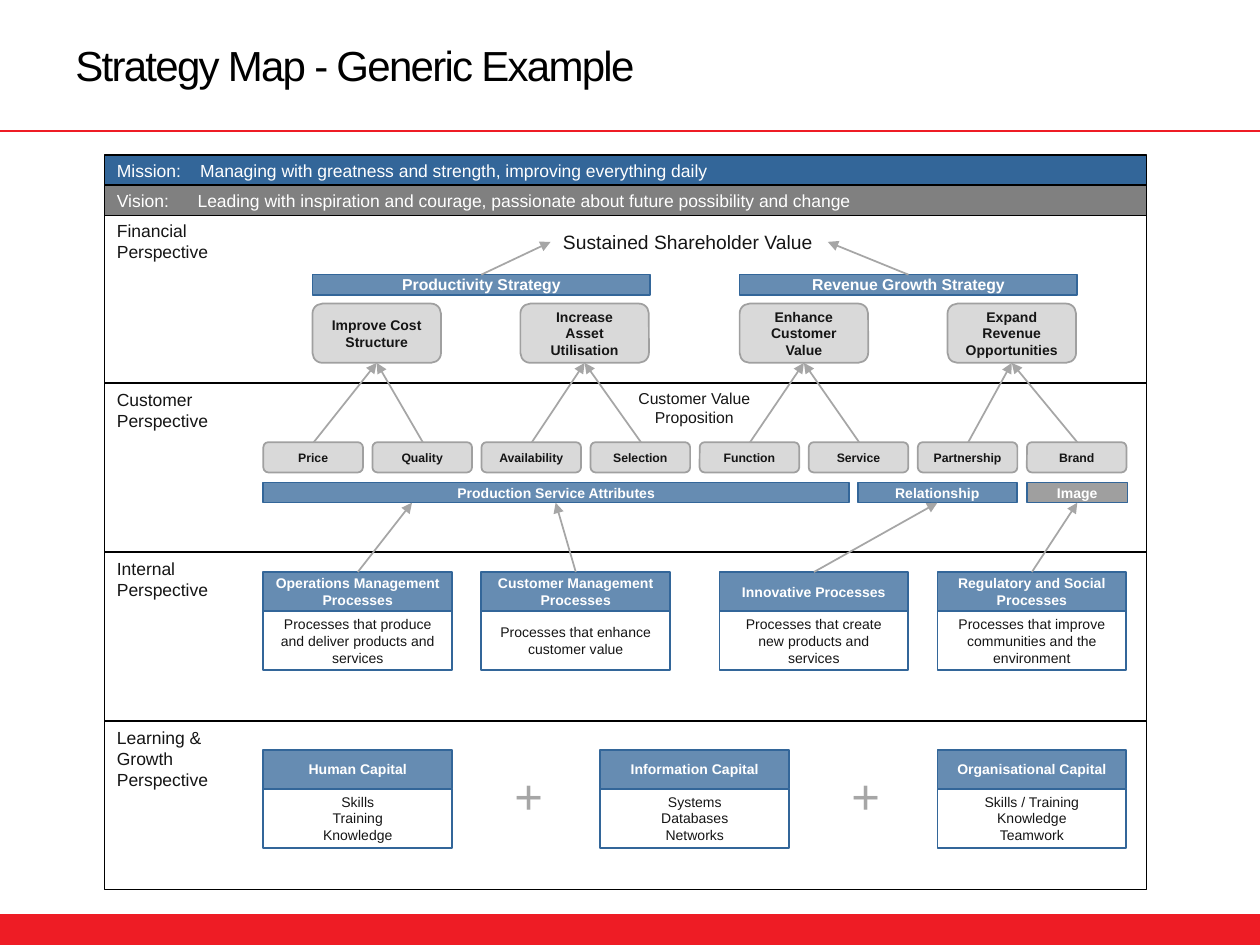
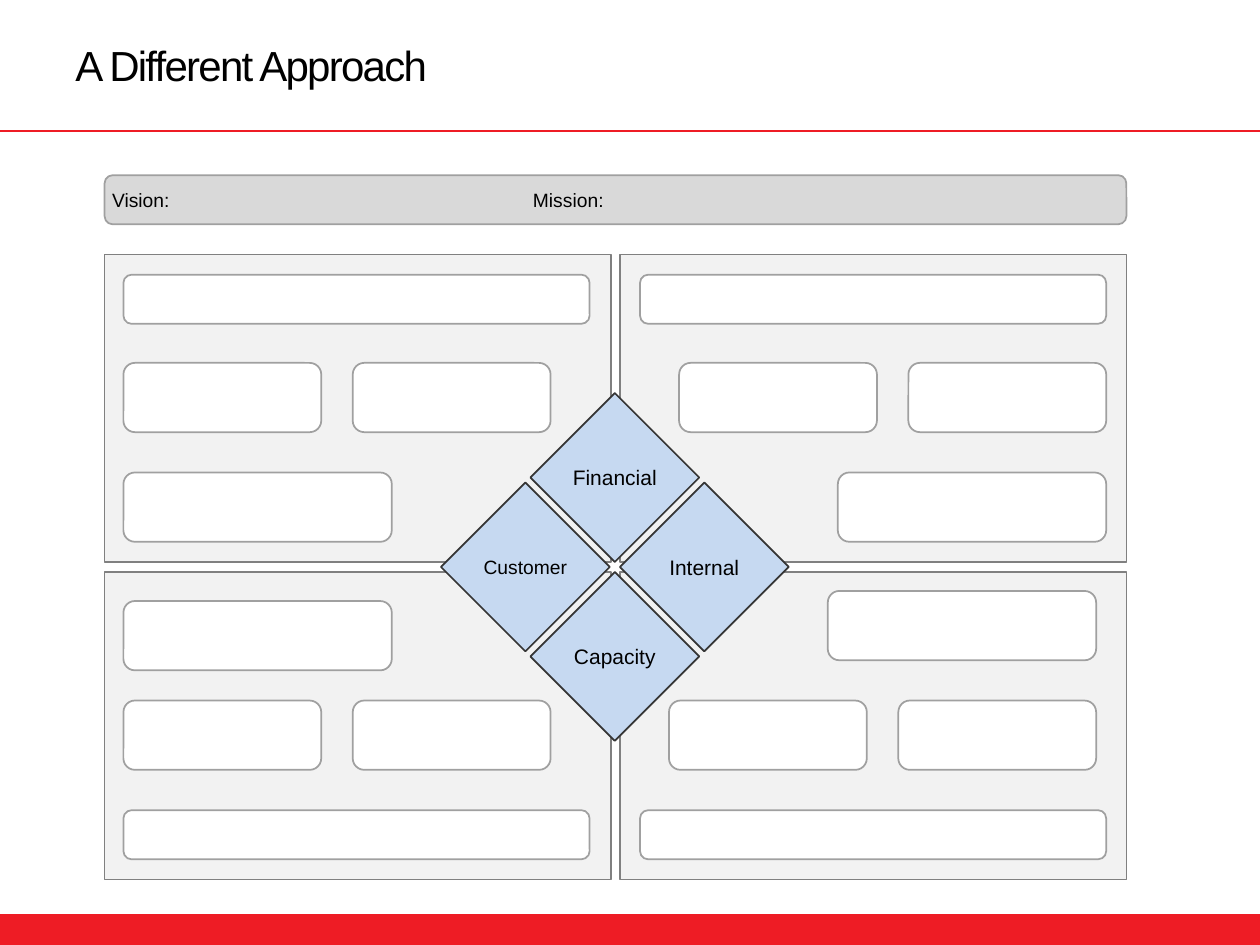
from lxml import etree
from pptx import Presentation, util as u
from pptx.dml.color import RGBColor
from pptx.enum import shapes, text
from pptx.oxml.ns import qn

COLORS = {
    "red": "EE1C25", "blue": "336699", "sky": "C6D9F1", "black": "000000",
    "ink": "151515", "charcoal": "353535", "gray": "808080", "edge": "A0A0A0",
    "arrow": "A6A6A6", "silver": "D9D9D9", "mist": "F2F2F2", "white": "FFFFFF",
}
RECT = shapes.MSO_SHAPE.RECTANGLE
ROUND = shapes.MSO_SHAPE.ROUNDED_RECTANGLE
DIAMOND = shapes.MSO_SHAPE.DIAMOND
LEFT, CENTER = text.PP_ALIGN.LEFT, text.PP_ALIGN.CENTER
TOP, MIDDLE = text.MSO_ANCHOR.TOP, text.MSO_ANCHOR.MIDDLE
INSETS = (0.1, 0.05)


def color(name):
    return RGBColor.from_string(COLORS[name])


class Painter:
    """Holds the deck style and the slide being drawn."""

    font = "Arial"

    def __init__(self, deck):
        self.deck = deck
        self.slide = None

    def new_slide(self, title):
        self.slide = self.deck.slides.add_slide(self.deck.slide_layouts[6])
        self.shape((0, 7.27, 10, 0.23), "red", "red", line_width=2.08)
        self.line((0, 1.04), (10, 1.04), "red", 1.5)
        box = self.label((0.5, 0.15, 7.29, 0.72), title, 24, "black",
                         anchor=MIDDLE, insets=(0.1, 0))
        for span in box.text_frame.paragraphs[0].runs:
            span._r.get_or_add_rPr().set("spc", "-100")

    def shape(self, place, fill, line, kind=RECT, opacity=100, line_width=1):
        box = self.slide.shapes.add_shape(kind, *map(u.Inches, place))
        box.shadow.inherit = False
        if fill:
            box.fill.solid()
            box.fill.fore_color.rgb = color(fill)
        else:
            box.fill.background()
        if opacity < 100:
            tint = box._element.spPr.find(qn("a:solidFill"))[0]
            etree.SubElement(tint, qn("a:alpha"), val=str(opacity * 1000))
        box.line.color.rgb = color(line)
        box.line.width = u.Pt(line_width)
        return box

    def put_text(self, box, words, size, ink="ink", bold=False, align=CENTER,
                 anchor=MIDDLE, insets=INSETS, tab=None, wrap=True):
        frame = box.text_frame
        frame.text = words
        frame.word_wrap = wrap
        frame.vertical_anchor = anchor
        frame.margin_left = frame.margin_right = u.Inches(insets[0])
        frame.margin_top = frame.margin_bottom = u.Inches(insets[1])
        for para in frame.paragraphs:
            para.alignment = align
            if tab:
                stops = etree.SubElement(para._p.get_or_add_pPr(), qn("a:tabLst"))
                etree.SubElement(stops, qn("a:tab"), pos=str(int(u.Inches(tab))), algn="l")
            for span in para.runs:
                span.font.name = self.font
                span.font.size = u.Pt(size)
                span.font.bold = bold
                span.font.color.rgb = color(ink)

    def label(self, place, words, size, ink="ink", align=LEFT, anchor=TOP, **style):
        box = self.slide.shapes.add_textbox(*map(u.Inches, place))
        self.put_text(box, words, size, ink, align=align, anchor=anchor, **style)
        return box

    def bar(self, place, words, size=8, fill="blue"):
        box = self.shape(place, fill, "blue", opacity=75)
        self.put_text(box, words, size, "white", bold=True)

    def pill(self, place, words, size):
        box = self.shape(place, "silver", "edge", ROUND)
        self.put_text(box, words, size, bold=True)

    def card(self, left, top, heading, body):
        self.bar((left, top, 1.5, 0.31), heading)
        box = self.shape((left, top + 0.31, 1.5, 0.47), "white", "blue", opacity=75)
        self.put_text(box, body, 8)

    def line(self, start, end, ink, width=1):
        line = self.slide.shapes.add_connector(
            shapes.MSO_CONNECTOR.STRAIGHT, *map(u.Inches, (*start, *end)))
        line.line.color.rgb = color(ink)
        line.line.width = u.Pt(width)
        etree.SubElement(line._element.spPr, qn("a:effectLst"))
        return line

    def arrow(self, start, end):
        line = self.line(start, end, "arrow")
        outline = line._element.spPr.find(qn("a:ln"))
        etree.SubElement(outline, qn("a:tailEnd"), type="triangle")


def draw_perspectives(painter):
    names = ["Financial\vPerspective", "Customer\vPerspective",
             "Internal\vPerspective", "Learning &\vGrowth\vPerspective"]
    for row, name in enumerate(names):
        panel = painter.shape((0.83, 1.7 + 1.34 * row, 8.27, 1.34), None, "black")
        painter.put_text(panel, name, 10, align=LEFT, anchor=TOP)
    statements = [
        (1.47, "gray", 0.64, "Vision:\tLeading with inspiration and courage, "
                             "passionate about future possibility and change"),
        (1.23, "blue", 0.66, "Mission:\tManaging with greatness and strength, "
                             "improving everything daily"),
    ]
    for top, fill, tab, words in statements:
        band = painter.shape((0.83, top, 8.27, 0.24), fill, "black")
        painter.put_text(band, words, 10, "white", align=LEFT, tab=tab)


def draw_financial(painter):
    """Draw strategies and goals; return the centre of each goal."""
    painter.label((4.37, 1.78, 2.2, 0.29), "Sustained Shareholder Value", 11)
    strategies = [
        (2.48, 4.37, "Productivity Strategy",
         ["Improve Cost Structure", "Increase Asset Utilisation"]),
        (5.87, 6.57, "Revenue Growth Strategy",
         ["Enhance Customer Value", "Expand Revenue Opportunities"]),
    ]
    centers = []
    for left, target, strategy, goals in strategies:
        painter.bar((left, 2.18, 2.68, 0.16), strategy, 9)
        painter.arrow((left + 1.34, 2.18), (target, 1.92))
        for column, goal in enumerate(goals):
            goal_left = left + 1.65 * column
            painter.pill((goal_left, 2.41, 1.02, 0.47), goal, 8)
            centers.append(goal_left + 0.51)
    return centers


def draw_customer(painter, goal_centers):
    painter.label((4.84, 3.04, 1.34, 0.4), "Customer Value Proposition", 9, align=CENTER)
    attributes = ["Price", "Quality", "Availability", "Selection",
                  "Function", "Service", "Partnership", "Brand"]
    pitch = (8.15 - 2.09) / (len(attributes) - 1)
    for column, attribute in enumerate(attributes):
        left = 2.09 + pitch * column
        painter.pill((left, 3.51, 0.79, 0.24), attribute, 7)
        painter.arrow((left + 0.4, 3.51), (goal_centers[column // 2], 2.88))
    painter.bar((2.09, 3.83, 4.65, 0.16), "Production Service Attributes")
    painter.bar((6.81, 3.83, 1.26, 0.16), "Relationship")
    painter.bar((8.15, 3.83, 0.8, 0.16), "Image", fill="gray")


def draw_internal(painter):
    processes = [
        (2.09, 3.27, "Operations Management Processes",
         "Processes that produce and deliver products and services"),
        (3.82, 4.41, "Customer Management Processes",
         "Processes that enhance customer value"),
        (5.71, 7.44, "Innovative Processes",
         "Processes that create new products and services"),
        (7.44, 8.55, "Regulatory and Social Processes",
         "Processes that improve communities and the environment"),
    ]
    for left, target, heading, body in processes:
        painter.card(left, 4.54, heading, body)
        painter.arrow((left + 0.75, 4.54), (target, 3.99))


def draw_learning(painter):
    capitals = [
        ("Human Capital", "Skills\nTraining\nKnowledge"),
        ("Information Capital", "Systems\nDatabases\nNetworks"),
        ("Organisational Capital", "Skills / Training\nKnowledge\nTeamwork"),
    ]
    pitch = (7.44 - 2.09) / (len(capitals) - 1)
    for column, (heading, body) in enumerate(capitals):
        left = 2.09 + pitch * column
        painter.card(left, 5.95, heading, body)
        if column:
            painter.label((left - 0.78, 6.03, 0.43, 0.57), "+", 28, "arrow", wrap=False)


def strategy_map(painter):
    painter.new_slide("Strategy Map - Generic Example")
    draw_perspectives(painter)
    goal_centers = draw_financial(painter)
    draw_customer(painter, goal_centers)
    draw_internal(painter)
    draw_learning(painter)


def different_approach(painter):
    painter.new_slide("A Different Approach")
    for top in (2.02, 4.54):
        for left in (0.83, 4.92):
            painter.shape((left, top, 4.02, 2.44), "mist", "gray")

    diamonds = [(4.21, 3.12, "Financial", 12), (4.21, 4.54, "Capacity", 12),
                (4.92, 3.83, "Internal", 12), (3.5, 3.83, "Customer", 11)]
    for left, top, name, size in diamonds:
        diamond = painter.shape((left, top, 1.34, 1.34), "sky", "charcoal", DIAMOND)
        painter.put_text(diamond, name, size, "black", insets=(0, 0.05))

    # top on the left, top on the right, height, width, count, right-hand edge
    slot_rows = [
        (2.18, 2.18, 0.39, 3.7, 1, 8.78), (2.88, 2.88, 0.55, 1.57, 2, 8.78),
        (3.75, 3.75, 0.55, 2.13, 1, 8.78), (4.77, 4.69, 0.55, 2.13, 1, 8.7),
        (5.56, 5.56, 0.55, 1.57, 2, 8.7), (6.43, 6.43, 0.39, 3.7, 1, 8.78),
    ]
    for left_top, right_top, height, width, count, right_edge in slot_rows:
        for column in range(count):
            offset = column * (width + 0.25)
            for left, top in ((0.98 + offset, left_top),
                              (right_edge - offset - width, right_top)):
                painter.shape((left, top, width, height), "white", "edge", ROUND)

    banner = painter.shape((0.83, 1.39, 8.11, 0.39), "silver", "edge", ROUND)
    painter.put_text(banner, "Vision:\tMission:", 11, "black", align=LEFT,
                     insets=(0.04, 0), tab=3.34)


def main():
    deck = Presentation()
    deck.slide_width, deck.slide_height = u.Inches(10), u.Inches(7.5)
    painter = Painter(deck)
    strategy_map(painter)
    different_approach(painter)
    deck.save("out.pptx")


if __name__ == "__main__":
    main()
